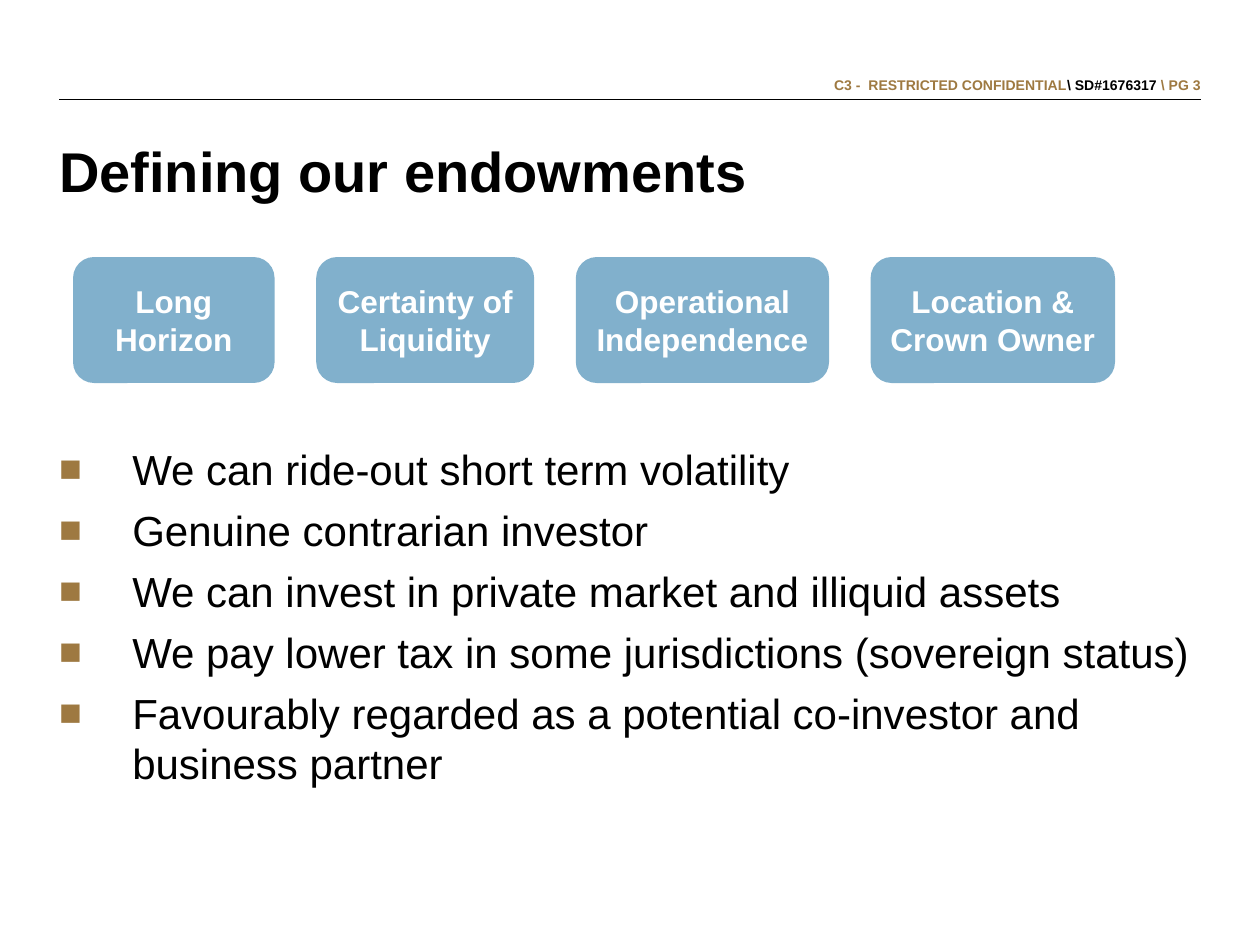
from dataclasses import dataclass

from lxml import etree
from pptx import Presentation
from pptx.dml.color import RGBColor
from pptx.enum.shapes import MSO_CONNECTOR, MSO_SHAPE
from pptx.enum.text import MSO_ANCHOR, MSO_AUTO_SIZE, PP_ALIGN
from pptx.oxml.ns import qn
from pptx.util import Inches, Pt

LEFT, CENTER, RIGHT = PP_ALIGN.LEFT, PP_ALIGN.CENTER, PP_ALIGN.RIGHT
MIDDLE = MSO_ANCHOR.MIDDLE
ROUNDED = MSO_SHAPE.ROUNDED_RECTANGLE
STRAIGHT = MSO_CONNECTOR.STRAIGHT
COLUMNS, ROWS = 100, 75


@dataclass(frozen=True)
class Theme:
    font: str = "Arial"
    ink: str = "000000"
    accent: str = "9E7941"
    panel: str = "81B0CC"
    light: str = "FFFFFF"
    title_size: int = 32
    body_size: int = 24
    panel_size: int = 18
    header_size: int = 8


class Page:
    def __init__(self, deck, theme):
        self.theme = theme
        self.column = deck.slide_width / COLUMNS
        self.row = deck.slide_height / ROWS
        self.slide = deck.slides.add_slide(deck.slide_layouts[6])

    def place(self, left, top, width, height):
        """Turn grid columns and rows into slide lengths."""
        return (round(left * self.column), round(top * self.row),
                round(width * self.column), round(height * self.row))

    def style(self, font, size, color, bold=False):
        font.name = self.theme.font
        font.size = Pt(size)
        font.bold = bold
        font.color.rgb = RGBColor.from_string(color)

    def text_frame(self, *area):
        """Add a wrapping text box without insets."""
        frame = self.slide.shapes.add_textbox(*self.place(*area)).text_frame
        frame.word_wrap = True
        frame.margin_left = frame.margin_right = 0
        frame.margin_top = frame.margin_bottom = 0
        return frame

    def rule(self, left, right, top):
        x, y, width, _ = self.place(left, top, right - left, 0)
        line = self.slide.shapes.add_connector(STRAIGHT, x, y, x + width, y)
        line.line.color.rgb = RGBColor.from_string(self.theme.ink)
        line.line.width = Pt(0.75)
        etree.SubElement(line._element.spPr, qn("a:effectLst"))

    def header(self, pieces, *area):
        frame = self.text_frame(*area)
        frame.auto_size = MSO_AUTO_SIZE.SHAPE_TO_FIT_TEXT
        para = frame.paragraphs[0]
        para.alignment = RIGHT
        for text, color in pieces:
            span = para.add_run()
            span.text = text
            self.style(span.font, self.theme.header_size, color, bold=True)

    def title(self, text, *area):
        para = self.text_frame(*area).paragraphs[0]
        para.text = text
        para.alignment = LEFT
        para.line_spacing = Pt(36)
        self.style(para.runs[0].font, self.theme.title_size, self.theme.ink, bold=True)

    def panel(self, text, *area):
        box = self.slide.shapes.add_shape(ROUNDED, *self.place(*area))
        box.shadow.inherit = False
        box.fill.solid()
        box.fill.fore_color.rgb = RGBColor.from_string(self.theme.panel)
        box.line.fill.background()
        frame = box.text_frame
        frame.word_wrap = True
        frame.vertical_anchor = MIDDLE
        frame.text = text
        para = frame.paragraphs[0]
        para.alignment = CENTER
        self.style(para.runs[0].font, self.theme.panel_size, self.theme.light, bold=True)

    def bullets(self, items, *area):
        frame = self.text_frame(*area)
        frame.text = "\n".join(items)
        for para in frame.paragraphs:
            self.add_bullet(para)
            para.space_after = Pt(6)
            self.style(para.runs[0].font, self.theme.body_size, self.theme.ink)

    def add_bullet(self, para):
        properties = para._p.get_or_add_pPr()
        indent = Inches(0.58)
        properties.set("marL", str(indent))
        properties.set("indent", str(-indent))
        color = etree.SubElement(properties, qn("a:buClr"))
        etree.SubElement(color, qn("a:srgbClr"), val=self.theme.accent)
        etree.SubElement(properties, qn("a:buSzPct"), val="90000")
        etree.SubElement(properties, qn("a:buFont"), typeface=self.theme.font)
        etree.SubElement(properties, qn("a:buChar"), char="■")


def main():
    deck = Presentation()
    deck.slide_width, deck.slide_height = Inches(10), Inches(7.5)
    theme = Theme()
    page = Page(deck, theme)
    margin = 4.7
    content_width = COLUMNS - 2 * margin

    page.rule(margin, COLUMNS - margin, 7.9)
    page.title("Defining our endowments", margin, 11.2, content_width, 5.9)
    page.bullets([
        "We can ride-out short term volatility",
        "Genuine contrarian investor",
        "We can invest in private market and illiquid assets",
        "We pay lower tax in some jurisdictions (sovereign status)",
        "Favourably regarded as a potential co-investor and business partner",
    ], margin, 35.2, content_width, 35.7)

    endowments = [
        ("Long Horizon", 16),
        ("Certainty of Liquidity", 17.3),
        ("Operational Independence", 20.1),
        ("Location & Crown Owner", 19.4),
    ]
    left, gap = 5.8, 3.3
    for text, width in endowments:
        page.panel(text, left, 20.4, width, 10)
        left += width + gap

    page.header([
        ("C3 -  RESTRICTED CONFIDENTIAL", theme.accent),
        ("\\ SD#1676317", theme.ink),
        (" \\ PG 3", theme.accent),
    ], 36.2, 6.1, 59.1, 1.4)
    deck.save("out.pptx")


if __name__ == "__main__":
    main()
